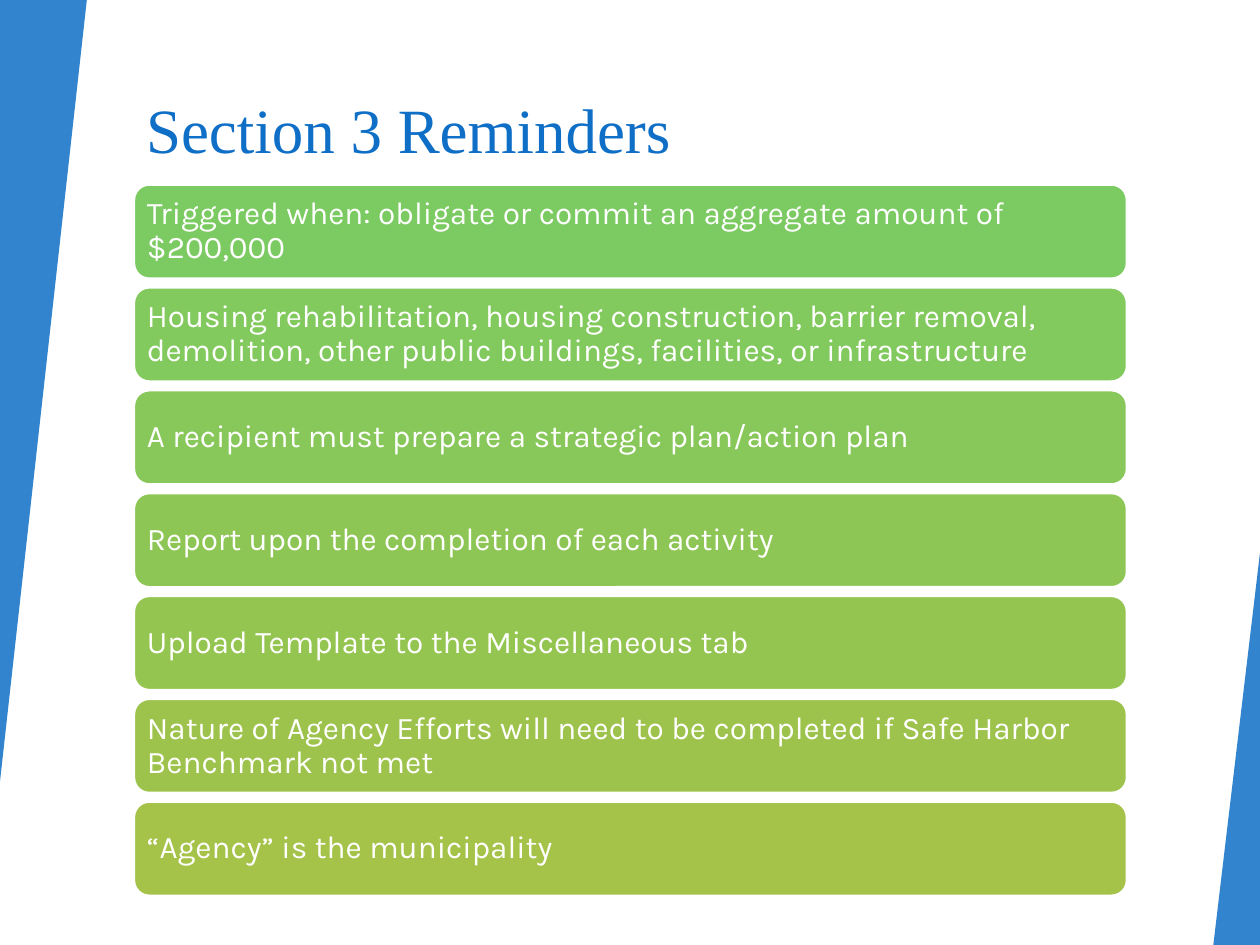
from dataclasses import dataclass

import lxml.etree
import pptx
import pptx.dml.color
import pptx.enum.shapes
import pptx.enum.text
import pptx.oxml.ns
import pptx.util

Cm = pptx.util.Cm
Shapes = pptx.enum.shapes.MSO_SHAPE
Anchor = pptx.enum.text.MSO_ANCHOR
Align = pptx.enum.text.PP_ALIGN


@dataclass(frozen=True)
class Theme:
    blue: str = "0F6FC6"
    white: str = "FFFFFF"
    title_font: str = "Times New Roman"
    body_font: str = "Karla"
    title_size: int = 36
    body_size: int = 18
    edge_width: int = 2
    wedge_opacity: int = 85


@dataclass(frozen=True)
class Frame:
    left: float
    top: float
    width: float
    height: float

    def lengths(self) -> tuple:
        return Cm(self.left), Cm(self.top), Cm(self.width), Cm(self.height)


@dataclass(frozen=True)
class Wedge:
    frame: Frame
    rotation: int


@dataclass(frozen=True)
class Reminder:
    text: str
    fill: str


THEME = Theme()
PAGE_WIDTH, PAGE_HEIGHT = 25.4, 19.05
TITLE_FRAME = Frame(2.69, 1.7, 21.23, 3.05)
FIRST_BAR = Frame(2.69, 3.71, 20.04, 1.92)
LAST_BAR_TOP = 16.15

WEDGES = [
    Wedge(Frame(0, 0, 1.75, 15.75), 180),
    Wedge(Frame(24.46, 11.15, 0.94, 7.9), 0),
]

REMINDERS = [
    Reminder("Triggered when: obligate or commit an aggregate amount of $200,000", "7CCA62"),
    Reminder(
        "Housing rehabilitation, housing construction, barrier removal, "
        "demolition, other public buildings, facilities, or infrastructure",
        "82C95E",
    ),
    Reminder("A recipient must prepare a strategic plan/action plan", "88C75A"),
    Reminder("Report upon the completion of each activity", "8EC656"),
    Reminder("Upload Template to the Miscellaneous tab", "95C551"),
    Reminder(
        "Nature of Agency Efforts will need to be completed if Safe Harbor Benchmark not met",
        "9DC34D",
    ),
    Reminder("“Agency” is the municipality", "A5C249"),
]


def color(value: str) -> pptx.dml.color.RGBColor:
    return pptx.dml.color.RGBColor.from_string(value)


def add_span(para, text: str, font: str, size: int, ink: str) -> None:
    span = para.add_run()
    span.text = text
    span.font.name = font
    span.font.size = pptx.util.Pt(size)
    span.font.color.rgb = color(ink)


def add_filled(page, kind, frame: Frame, fill: str):
    box = page.shapes.add_shape(kind, *frame.lengths())
    box.shadow.inherit = False
    box.fill.solid()
    box.fill.fore_color.rgb = color(fill)
    return box


def write_title(page, text: str) -> None:
    box = page.shapes.title
    box.left, box.top, box.width, box.height = TITLE_FRAME.lengths()
    box.text_frame.vertical_anchor = Anchor.TOP
    para = box.text_frame.paragraphs[0]
    para.alignment = Align.LEFT
    add_span(para, text, THEME.title_font, THEME.title_size, THEME.blue)


def draw_wedge(page, wedge: Wedge) -> None:
    box = add_filled(page, Shapes.ISOSCELES_TRIANGLE, wedge.frame, THEME.blue)
    box.adjustments[0] = 1
    box.rotation = wedge.rotation
    box.line.fill.background()
    qn = pptx.oxml.ns.qn
    tint = box.fill._xPr.find(qn("a:solidFill")).find(qn("a:srgbClr"))
    alpha = lxml.etree.SubElement(tint, qn("a:alpha"))
    alpha.set("val", str(THEME.wedge_opacity * 1000))


def draw_reminder(page, reminder: Reminder, frame: Frame) -> None:
    box = add_filled(page, Shapes.ROUNDED_RECTANGLE, frame, reminder.fill)
    box.line.color.rgb = color(THEME.white)
    box.line.width = pptx.util.Pt(THEME.edge_width)
    body = box.text_frame
    body.word_wrap = True
    body.vertical_anchor = Anchor.MIDDLE
    body.margin_left = body.margin_right = Cm(0.18)
    body.margin_top = body.margin_bottom = Cm(0.18)
    para = body.paragraphs[0]
    para.alignment = Align.LEFT
    para.line_spacing = 0.9
    add_span(para, reminder.text, THEME.body_font, THEME.body_size, THEME.white)


def main() -> None:
    deck = pptx.Presentation()
    deck.slide_width, deck.slide_height = Cm(PAGE_WIDTH), Cm(PAGE_HEIGHT)
    page = deck.slides.add_slide(deck.slide_layouts.get_by_name("Title Only"))
    write_title(page, "Section 3 Reminders")
    for wedge in WEDGES:
        draw_wedge(page, wedge)
    pitch = (LAST_BAR_TOP - FIRST_BAR.top) / (len(REMINDERS) - 1)
    for row, reminder in enumerate(REMINDERS):
        top = FIRST_BAR.top + row * pitch
        frame = Frame(FIRST_BAR.left, top, FIRST_BAR.width, FIRST_BAR.height)
        draw_reminder(page, reminder, frame)
    deck.save("out.pptx")


if __name__ == "__main__":
    main()
